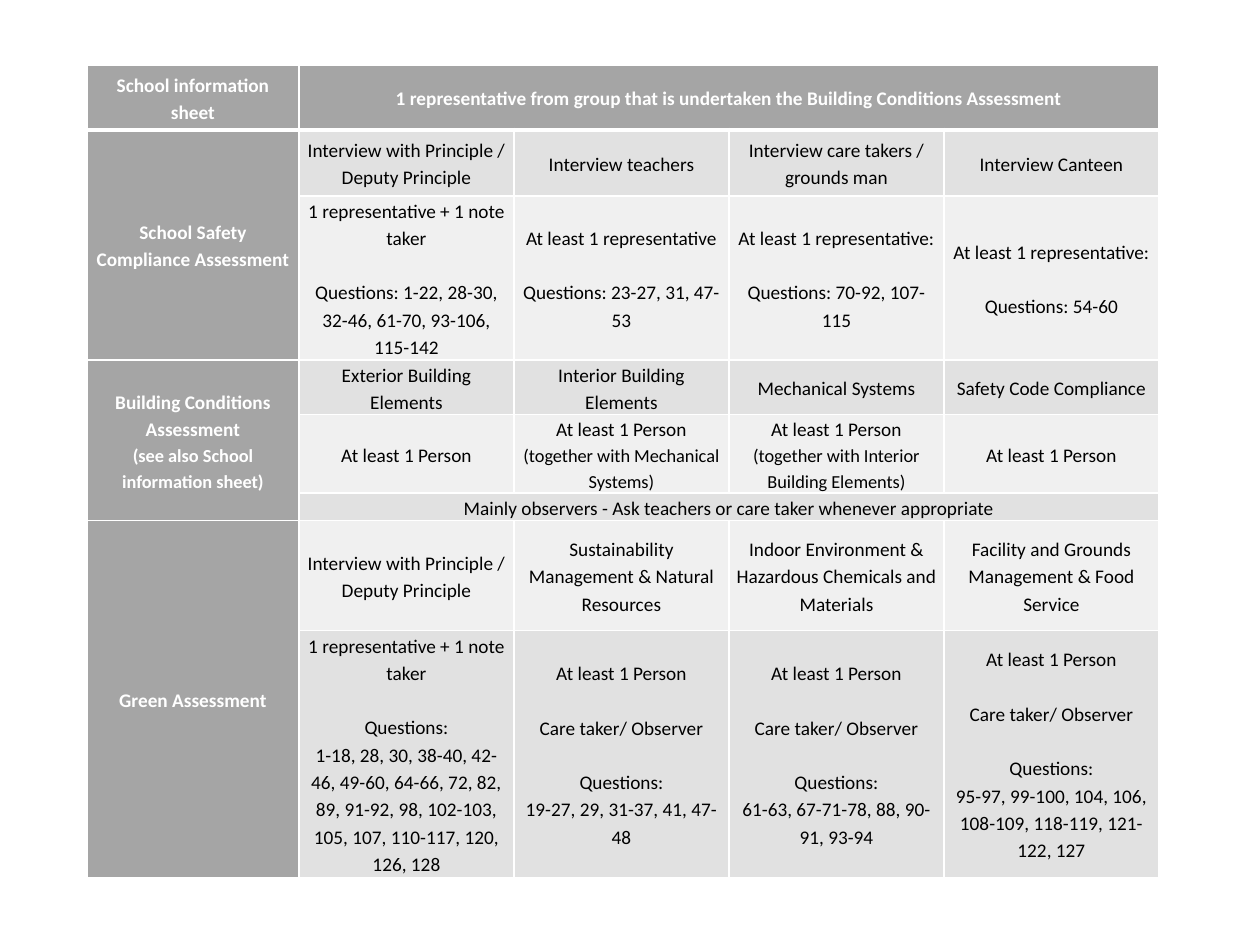
from dataclasses import dataclass

from lxml import etree
from pptx import Presentation
from pptx.dml.color import RGBColor
from pptx.enum.text import MSO_ANCHOR, PP_ALIGN
from pptx.oxml.ns import qn
from pptx.util import Emu, Pt


@dataclass(frozen=True)
class Theme:
    font: str = "Calibri"
    body_size: float = 11
    note_size: float = 10.5
    line_spacing: float = 1.15
    group_gap: float = 15.5
    heading_fill: str = "A5A5A5"
    dark_band: str = "E1E1E1"
    light_band: str = "F0F0F0"
    heading_text: str = "FFFFFF"
    body_text: str = "000000"
    border: str = "FFFFFF"
    thin: int = 1
    thick: int = 3


THEME = Theme()
EMU_PER_PX = 914400 / 126


def px(length):
    return Emu(round(length * EMU_PER_PX))


def set_borders(cell, top, bottom):
    """Draw all four cell borders; must run before the cell gets its fill."""
    properties = cell._tc.get_or_add_tcPr()
    widths = {"lnL": THEME.thin, "lnR": THEME.thin, "lnT": top, "lnB": bottom}
    for side, width in widths.items():
        line = etree.SubElement(properties, qn(f"a:{side}"), w=str(Pt(width)))
        fill = etree.SubElement(line, qn("a:solidFill"))
        etree.SubElement(fill, qn("a:srgbClr"), val=THEME.border)


# Each row: height, band fill, row heading, cells.
# A line break starts a paragraph; a double one also leaves a gap above it.
ROWS = [
    (65, THEME.heading_fill, "School information sheet",
     ["1 representative from group that is undertaken the Building Conditions Assessment"]),
    (66, THEME.dark_band, "School Safety Compliance Assessment",
     ["Interview with Principle / Deputy Principle",
      "Interview teachers",
      "Interview care takers / grounds man",
      "Interview Canteen"]),
    (164, THEME.light_band, None,
     ["1 representative + 1 note taker\n\n"
      "Questions: 1-22, 28-30, 32-46, 61-70, 93-106, 115-142",
      "At least 1 representative\n\nQuestions: 23-27, 31, 47-53",
      "At least 1 representative:\n\nQuestions: 70-92, 107-115",
      "At least 1 representative:\n\nQuestions: 54-60"]),
    (54, THEME.dark_band,
     "Building Conditions Assessment\n(see also School information sheet)",
     ["Exterior Building Elements",
      "Interior Building Elements",
      "Mechanical Systems",
      "Safety Code Compliance"]),
    (78, THEME.light_band, None,
     ["At least 1 Person",
      "At least 1 Person\n(together with Mechanical Systems)",
      "At least 1 Person\n(together with Interior Building Elements)",
      "At least 1 Person"]),
    (27, THEME.dark_band, None,
     ["Mainly observers - Ask teachers or care taker whenever appropriate"]),
    (110, THEME.light_band, "Green Assessment",
     ["Interview with Principle / Deputy Principle",
      "Sustainability Management & Natural Resources",
      "Indoor Environment & Hazardous Chemicals and Materials",
      "Facility and Grounds Management & Food Service"]),
    (247, THEME.dark_band, None,
     ["1 representative + 1 note taker\n\nQuestions:\n"
      "1-18, 28, 30, 38-40, 42-46, 49-60, 64-66, 72, 82, 89, 91-92, 98, "
      "102-103, 105, 107, 110-117, 120, 126, 128",
      "At least 1 Person\n\nCare taker/ Observer\n\nQuestions:\n"
      "19-27, 29, 31-37, 41, 47-48",
      "At least 1 Person\n\nCare taker/ Observer\n\nQuestions:\n"
      "61-63, 67-71-78, 88, 90-91, 93-94",
      "At least 1 Person\n\nCare taker/ Observer\n\nQuestions:\n"
      "95-97, 99-100, 104, 106, 108-109, 118-119, 121-122, 127"]),
]
COLUMN_WIDTHS = [212] + [215] * 4

presentation = Presentation()
presentation.slide_width = px(1260)
presentation.slide_height = px(945)
slide = presentation.slides.add_slide(presentation.slide_layouts[6])

schedule = slide.shapes.add_table(
    len(ROWS), len(COLUMN_WIDTHS), px(87), px(65),
    px(sum(COLUMN_WIDTHS)), px(sum(row[0] for row in ROWS)),
).table
schedule.first_row = False
schedule.horz_banding = False
for column, width in zip(schedule.columns, COLUMN_WIDTHS):
    column.width = px(width)

heading_rows = [index for index, row in enumerate(ROWS) if row[2]]
for first, following in zip(heading_rows, heading_rows[1:] + [len(ROWS)]):
    if following - first > 1:
        schedule.cell(first, 0).merge(schedule.cell(following - 1, 0))

for row_index, (height, band, heading, entries) in enumerate(ROWS):
    schedule.rows[row_index].height = px(height)
    if len(entries) == 1:
        schedule.cell(row_index, 1).merge(schedule.cell(row_index, 4))
    texts = [heading] + entries + [None] * (4 - len(entries))
    for column_index, text in enumerate(texts):
        cell = schedule.cell(row_index, column_index)
        is_heading = column_index == 0 or row_index == 0
        set_borders(cell,
                    top=THEME.thick if row_index == 1 else THEME.thin,
                    bottom=THEME.thick if row_index == 0 else THEME.thin)
        cell.fill.solid()
        cell.fill.fore_color.rgb = RGBColor.from_string(
            THEME.heading_fill if is_heading else band)
        cell.margin_left = cell.margin_right = px(6)
        cell.margin_top = cell.margin_bottom = 0
        cell.vertical_anchor = MSO_ANCHOR.MIDDLE
        if text is None:
            continue

        groups = [group.split("\n") for group in text.split("\n\n")]
        lines = [(line, group_index > 0 and line_index == 0)
                 for group_index, group in enumerate(groups)
                 for line_index, line in enumerate(group)]
        cell.text = "\n".join(line for line, _ in lines)
        for paragraph, (line, opens_group) in zip(cell.text_frame.paragraphs, lines):
            paragraph.alignment = PP_ALIGN.CENTER
            paragraph.line_spacing = THEME.line_spacing
            if opens_group:
                paragraph.space_before = Pt(THEME.group_gap)
            font = paragraph.font
            font.name = THEME.font
            font.size = Pt(THEME.note_size if line.startswith("(") else THEME.body_size)
            font.bold = is_heading
            font.color.rgb = RGBColor.from_string(
                THEME.heading_text if is_heading else THEME.body_text)

presentation.save("out.pptx")
